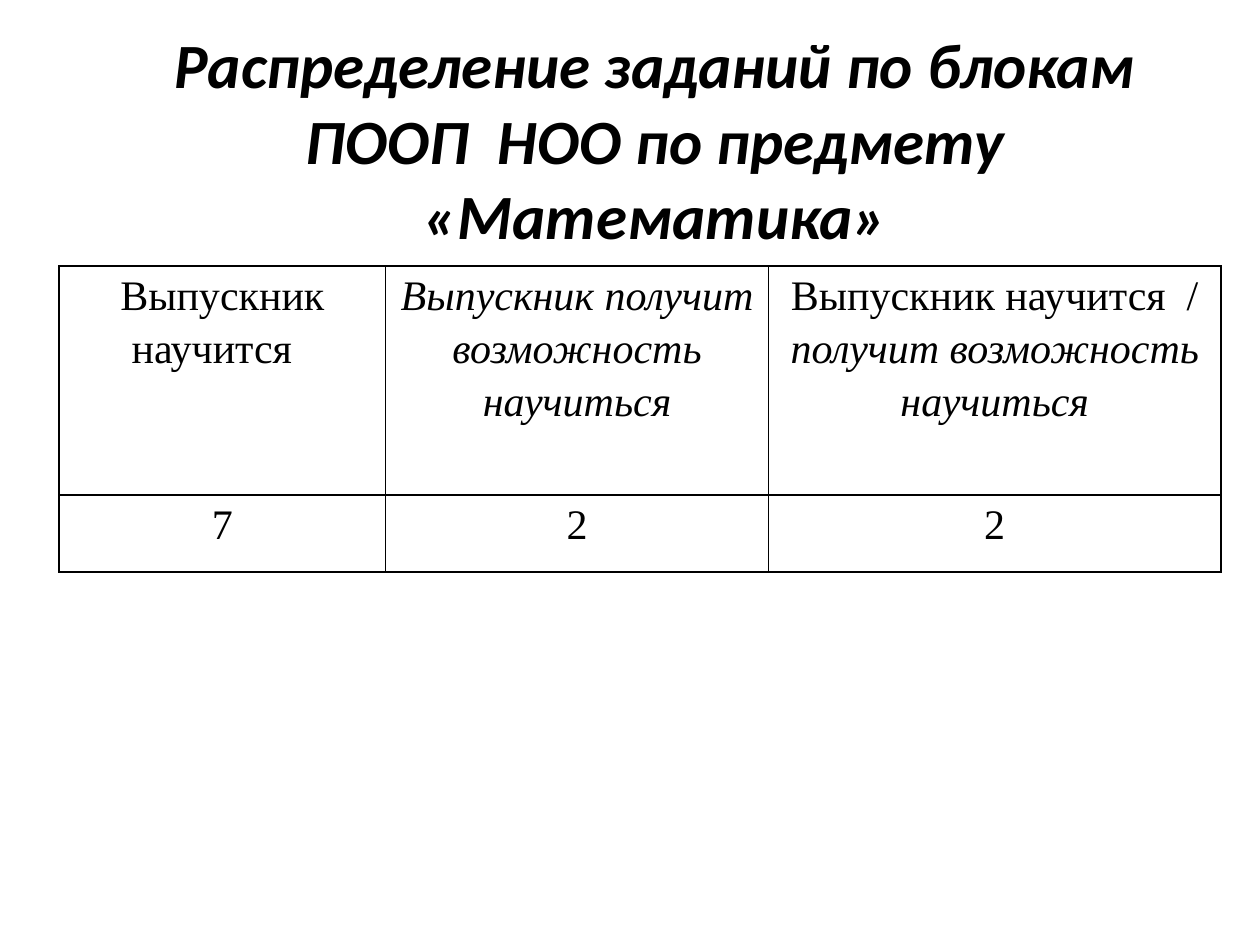
from lxml.etree import fromstring
from pptx import Presentation
from pptx.dml.color import RGBColor
from pptx.enum.text import MSO_ANCHOR, MSO_AUTO_SIZE, PP_ALIGN
from pptx.oxml.ns import nsdecls
from pptx.util import Inches, Pt

BLACK = RGBColor(0, 0, 0)
COLS = [2.59, 3.04, 3.59]
ROWS = [1.82, 0.61]
# Each cell is a list of (text, italic) runs.
CELLS = [
    [
        [("Выпускник научится  ", False)],
        [("Выпускник получит возможность научиться", True)],
        [("Выпускник научится  /", False),
         (" получит возможность научиться", True)],
    ],
    [[("7", False)], [("2", False)], [("2", False)]],
]


def style(par, face, size):
    par.alignment = PP_ALIGN.CENTER
    par.font.name = face
    par.font.size = Pt(size)
    par.font.color.rgb = BLACK


def border(cell):
    """Draw a thin black line on all four sides of the cell."""
    props = cell._tc.get_or_add_tcPr()
    for spot, side in enumerate("LRTB"):
        props.insert(spot, fromstring(
            f'<a:ln{side} {nsdecls("a")} w="{Pt(1)}"><a:solidFill>'
            f'<a:srgbClr val="{BLACK}"/></a:solidFill></a:ln{side}>'))


prs = Presentation()
prs.slide_width, prs.slide_height = Inches(10), Inches(7.5)
slide = prs.slides.add_slide(prs.slide_layouts[5])

title = slide.shapes.title
title.left, title.top = Inches(0.7), Inches(0.78)
title.width, title.height = Inches(9), Inches(1.25)
frame = title.text_frame
frame.text = "Распределение заданий по блокам ПООП  НОО по предмету «Математика»"
frame.word_wrap = True
frame.auto_size = MSO_AUTO_SIZE.NONE
frame.vertical_anchor = MSO_ANCHOR.MIDDLE
frame.margin_bottom = Inches(0.65)  # lifts the heading clear of the table
head = frame.paragraphs[0]
style(head, "Calibri", 36)
head.font.bold = head.font.italic = True

table = slide.shapes.add_table(
    len(ROWS), len(COLS), Inches(0.47), Inches(2.11),
    Inches(sum(COLS)), Inches(sum(ROWS))).table
table.first_row = table.horz_banding = False
for col, width in zip(table.columns, COLS):
    col.width = Inches(width)
for row, height, line in zip(table.rows, ROWS, CELLS):
    row.height = Inches(height)
    for cell, runs in zip(row.cells, line):
        cell.fill.background()
        border(cell)
        cell.margin_left = cell.margin_right = Inches(0.07)
        cell.margin_top = cell.margin_bottom = 0
        par = cell.text_frame.paragraphs[0]
        style(par, "Times New Roman", 24)
        par.line_spacing = 1.15
        for text, slant in runs:
            run = par.add_run()
            run.text = text
            run.font.italic = slant

prs.save("out.pptx")
